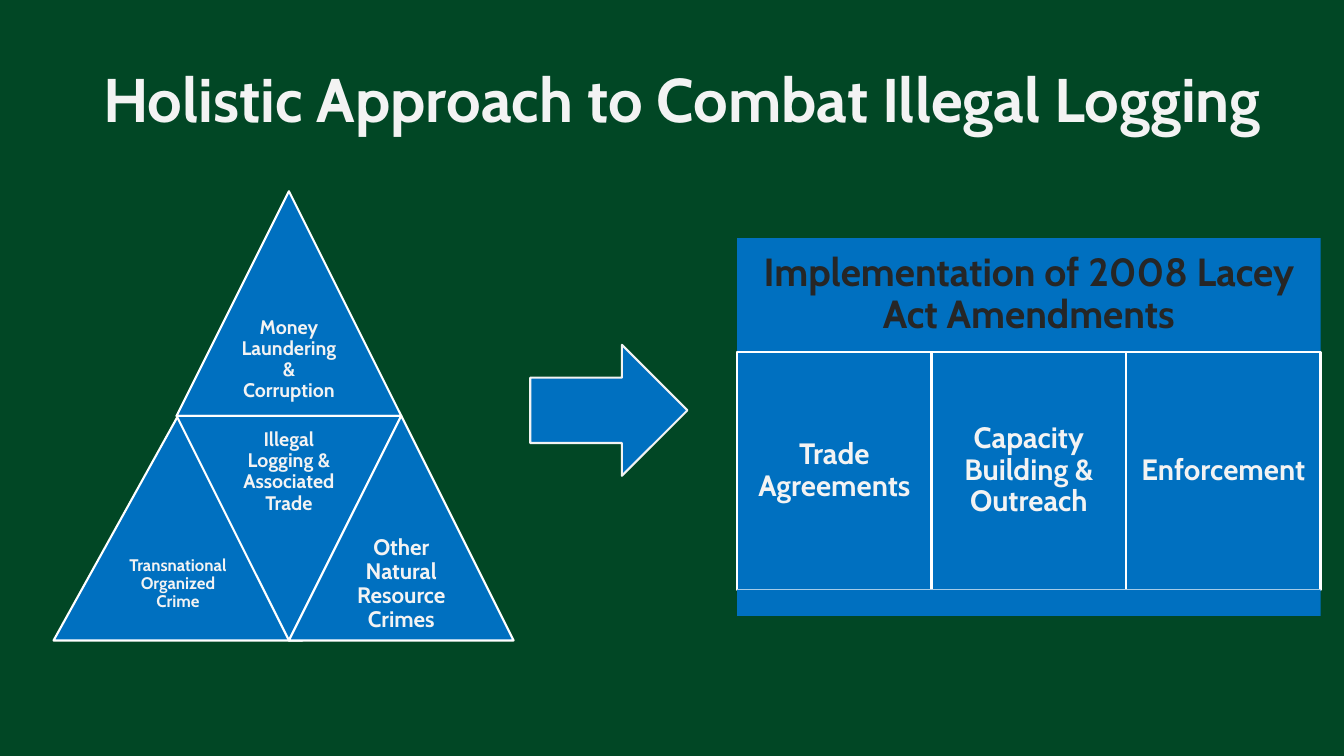
import pptx
import pptx.util
import pptx.dml.color
import pptx.enum.shapes
import pptx.enum.text
from dataclasses import dataclass

Cm, Pt = pptx.util.Cm, pptx.util.Pt
Shape = pptx.enum.shapes.MSO_SHAPE
Text = pptx.enum.text


@dataclass(frozen=True)
class Theme:
    font: str = "Cabin"
    back: str = "014725"
    blue: str = "0070C0"
    white: str = "FFFFFF"
    light: str = "F3F3F3"
    dark: str = "262626"
    title: int = 44
    head: int = 28
    cell: int = 21
    large: int = 16
    mid: int = 14
    small: int = 12
    line: float = 1.5


def color(code):
    return pptx.dml.color.RGBColor.from_string(code)


class Page:
    def __init__(self, deck, theme):
        self.theme = theme
        self.slide = deck.slides.add_slide(deck.slide_layouts[5])
        self.home = self.slide.shapes
        fill = self.slide.background.fill
        fill.solid()
        fill.fore_color.rgb = color(theme.back)

    def group(self):
        """Send the shapes that follow into a new group."""
        self.home = self.slide.shapes.add_group_shape().shapes

    def ungroup(self):
        self.home = self.slide.shapes

    def label(self, shape, text, size, tone, inset=None):
        frame = shape.text_frame
        frame.text = text
        frame.word_wrap = True
        frame.auto_size = Text.MSO_AUTO_SIZE.NONE
        frame.vertical_anchor = Text.MSO_ANCHOR.MIDDLE
        if inset is not None:
            frame.margin_left = frame.margin_right = Cm(inset)
            frame.margin_top = frame.margin_bottom = Cm(inset)
        para = frame.paragraphs[0]
        para.alignment = Text.PP_ALIGN.CENTER
        para.line_spacing = 0.9
        font = para.runs[0].font
        font.name, font.size, font.bold = self.theme.font, Pt(size), True
        font.color.rgb = color(tone)

    def title(self, text, *box):
        shape = self.slide.shapes.title
        shape.left, shape.top, shape.width, shape.height = map(Cm, box)
        self.label(shape, text, self.theme.title, self.theme.light)

    def block(self, kind, *box, edge=None):
        shape = self.home.add_shape(kind, *map(Cm, box))
        shape.shadow.inherit = False
        shape.fill.solid()
        shape.fill.fore_color.rgb = color(self.theme.blue)
        if edge:
            shape.line.color.rgb = color(edge)
            shape.line.width = Pt(self.theme.line)
        else:
            shape.line.fill.background()
        return shape

    def peak(self, text, size, inset, left, top, width, high, flip=False):
        """Triangle with a label in the wide half; flip points it down."""
        shape = self.block(Shape.ISOSCELES_TRIANGLE, left, top, width, high,
                           edge=self.theme.white)
        shape.rotation = 180 if flip else 0
        start = top if flip else top + high / 2
        area = (left + width / 4, start, width / 2, high / 2)
        box = self.home.add_textbox(*map(Cm, area))
        self.label(box, text, size, self.theme.light, inset)


def main():
    deck = pptx.Presentation()
    deck.slide_width, deck.slide_height = Cm(33.86), Cm(19.05)
    theme = Theme()
    page = Page(deck, theme)
    page.title("Holistic Approach to Combat Illegal Logging",
               1.09, 0.74, 32.21, 3.68)

    side, left, top = 5.66, 4.45, 4.82
    base = top + side
    page.group()
    page.peak("Money Laundering & Corruption", theme.mid, 0.15,
              left, top, side, side)
    page.peak("Transnational Organized Crime", theme.small, 0.13,
              1.35, base, 6.27, side)
    page.peak("Illegal Logging & Associated Trade", theme.mid, 0.15,
              left, base, side, side, flip=True)
    page.peak("Other Natural Resource Crimes", theme.large, 0.17,
              left + side / 2, base, side, side)

    page.ungroup()
    page.block(Shape.RIGHT_ARROW, 13.36, 8.69, 3.96, 3.3, edge=theme.light)

    page.group()
    left, top, wide, head, high = 18.57, 6, 14.7, 2.86, 6
    bar = page.block(Shape.RECTANGLE, left, top, wide, head)
    page.label(bar, "Implementation of 2008 Lacey Act Amendments",
               theme.head, theme.dark, 0.3)
    names = ["Trade Agreements", "Capacity Building & Outreach", "Enforcement"]
    step = wide / len(names)
    for i, name in enumerate(names):
        cell = page.block(Shape.RECTANGLE, left + i * step, top + head,
                          step, high, edge=theme.white)
        page.label(cell, name, theme.cell, theme.light, 0.23)
    page.block(Shape.RECTANGLE, left, top + head + high, wide, 0.66)

    deck.save("out.pptx")


if __name__ == "__main__":
    main()
